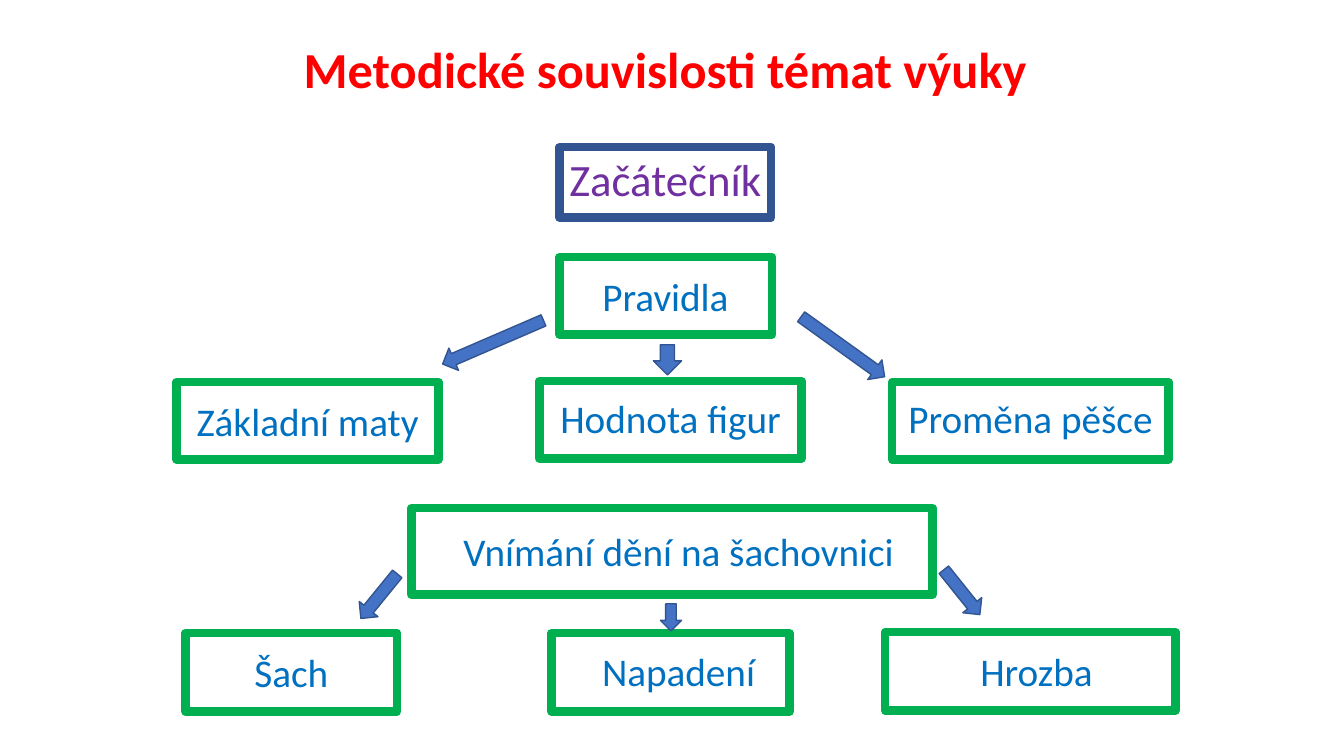
import pptx
import pptx.util
import pptx.dml.color
import pptx.enum.shapes
import pptx.enum.text

Inches = pptx.util.Inches
Pt = pptx.util.Pt

COLORS = {
    "title": "FF0000", "level": "7030A0", "topic": "0070C0",
    "topic frame": "00B050", "arrow": "4472C4", "navy": "325491",
}
TITLE = "Metodické souvislosti témat výuky"
TITLE_AREA = (1.24, 0.44, 10.72, 0.56)
LEVEL = "Začátečník"
LEVEL_FRAME = (5.55, 1.46, 2.1, 0.7)
LEVEL_LABEL = (5.54, 1.46, 2.12, 0.64)

# text, frame (left, top, width, height), label (left, top, width)
TOPICS = [
    ("Pravidla", (5.55, 2.55, 2.11, 0.77), (5.6, 2.65, 2)),
    ("Základní maty", (1.75, 3.79, 2.6, 0.77), (1.84, 3.89, 2.42)),
    ("Hodnota figur", (5.35, 3.78, 2.6, 0.77), (5.44, 3.86, 2.42)),
    ("Proměna pěšce", (8.85, 3.79, 2.74, 0.77), (8.85, 3.86, 2.74)),
    ("Vnímání dění na šachovnici", (4.08, 5.04, 5.17, 0.86), (4.26, 5.18, 4.94)),
    ("Šach", (1.84, 6.28, 2.1, 0.78), (1.96, 6.38, 1.86)),
    ("Napadení", (5.47, 6.28, 2.36, 0.78), (5.73, 6.37, 2)),
    ("Hrozba", (8.78, 6.27, 2.88, 0.78), (9.28, 6.37, 2)),
]
LABEL_HEIGHT = 0.57

# left, top, width, height, rotation
ARROWS = [
    (4.77, 2.85, 0.24, 1.09, 66.6),
    (6.48, 3.42, 0.28, 0.3, 0),
    (8.24, 2.93, 0.24, 1.02, 305.7),
    (3.64, 5.63, 0.24, 0.57, 39.2),
    (6.55, 5.99, 0.21, 0.27, 0),
    (9.42, 5.59, 0.24, 0.57, 321.3),
]


def rgb(name):
    return pptx.dml.color.RGBColor.from_string(COLORS[name])


def write(box, text, color, size=28, bold=False, wrap=True, spacing=None):
    frame = box.text_frame
    frame.word_wrap = wrap
    frame.auto_size = pptx.enum.text.MSO_AUTO_SIZE.NONE
    para = frame.paragraphs[0]
    para.alignment = pptx.enum.text.PP_ALIGN.CENTER
    para.line_spacing = spacing
    span = para.add_run()
    span.text = text
    span.font.name = "Calibri"
    span.font.size = Pt(size)
    span.font.bold = bold
    span.font.color.rgb = rgb(color)


def add_outlined(page, kind, area, line, weight, fill=None):
    shape = page.shapes.add_shape(kind, *map(Inches, area))
    shape.shadow.inherit = False
    shape.line.color.rgb = rgb(line)
    shape.line.width = Pt(weight)
    if fill:
        shape.fill.solid()
        shape.fill.fore_color.rgb = rgb(fill)
    else:
        shape.fill.background()
    return shape


def add_label(page, area, text, color, **style):
    write(page.shapes.add_textbox(*map(Inches, area)), text, color, **style)


def main():
    shapes = pptx.enum.shapes.MSO_SHAPE
    deck = pptx.Presentation()
    deck.slide_width, deck.slide_height = Inches(13.33), Inches(7.5)
    page = deck.slides.add_slide(deck.slide_layouts[5])

    title = page.shapes.title
    title.left, title.top, title.width, title.height = map(Inches, TITLE_AREA)
    title.text_frame.vertical_anchor = pptx.enum.text.MSO_ANCHOR.MIDDLE
    write(title, TITLE, "title", size=36, bold=True, spacing=0.9)

    add_outlined(page, shapes.RECTANGLE, LEVEL_FRAME, "navy", 6)
    add_label(page, LEVEL_LABEL, LEVEL, "level", size=32, wrap=False)

    for text, frame, label in TOPICS:
        add_outlined(page, shapes.RECTANGLE, frame, "topic frame", 6)
        add_label(page, (*label, LABEL_HEIGHT), text, "topic")

    for *area, angle in ARROWS:
        arrow = add_outlined(page, shapes.DOWN_ARROW, area, "navy", 1, fill="arrow")
        arrow.rotation = angle

    deck.save("out.pptx")


if __name__ == "__main__":
    main()
